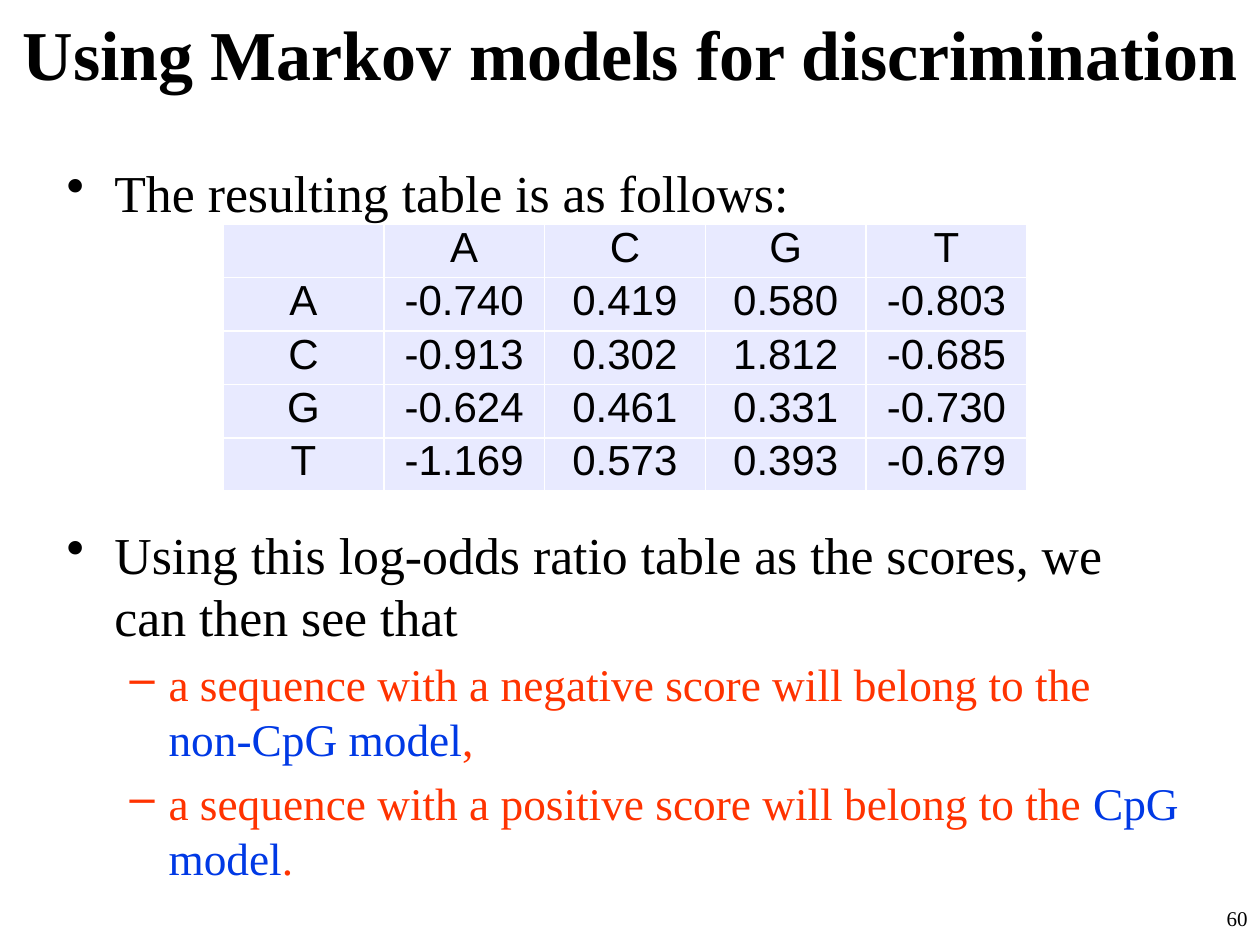
from dataclasses import dataclass

from pptx import Presentation
from pptx.dml.color import RGBColor
from pptx.enum.text import MSO_ANCHOR, PP_ALIGN
from pptx.oxml import parse_xml
from pptx.oxml.ns import nsdecls
from pptx.util import Inches, Pt


@dataclass(frozen=True)
class Theme:
    serif: str = "Times New Roman"
    sans: str = "Arial"
    black: str = "000000"
    white: str = "FFFFFF"
    red: str = "FF3300"
    blue: str = "0039E5"
    cell: str = "E8EAFF"
    title_size: float = 40
    number_size: float = 12
    table_size: float = 24
    # Per bullet level: symbol, text size, line pitch, left margin, hanging indent
    levels: tuple = (
        ("•", 29.6, 35.4, 0.38, 0.38),
        ("–", 25.9, 31.4, 0.81, 0.31),
    )


class SlideBuilder:
    def __init__(self, slide, theme):
        self.slide = slide
        self.theme = theme

    def set_font(self, font, name, size, color, bold=False):
        font.name = name
        font.size = Pt(size)
        font.bold = bold
        font.color.rgb = RGBColor.from_string(color)

    def text_frame(self, left, top, width, height, anchor=MSO_ANCHOR.TOP):
        shape = self.slide.shapes.add_textbox(
            Inches(left), Inches(top), Inches(width), Inches(height))
        frame = shape.text_frame
        frame.word_wrap = True
        frame.vertical_anchor = anchor
        return frame

    def line(self, frame, text, size, alignment, bold=False):
        paragraph = frame.paragraphs[0]
        paragraph.text = text
        paragraph.alignment = alignment
        self.set_font(paragraph.font, self.theme.serif, size, self.theme.black, bold)

    def bullet(self, paragraph, level, runs, space_before):
        symbol, size, pitch, margin, hanging = self.theme.levels[level]
        paragraph.level = level
        paragraph.line_spacing = Pt(pitch)
        paragraph.space_before = Pt(space_before)
        properties = paragraph._p.get_or_add_pPr()
        properties.set("marL", str(Inches(margin)))
        properties.set("indent", str(-Inches(hanging)))
        properties.append(parse_xml(f'<a:buChar {nsdecls("a")} char="{symbol}"/>'))
        for text, color in runs:
            run = paragraph.add_run()
            run.text = text
            self.set_font(run.font, self.theme.serif, size, color)

    def bullets(self, frame, items):
        for index, (level, runs, space_before) in enumerate(items):
            paragraph = frame.add_paragraph() if index else frame.paragraphs[0]
            self.bullet(paragraph, level, runs, space_before)

    def table(self, rows, left, top, width, height):
        shape = self.slide.shapes.add_table(
            len(rows), len(rows[0]),
            Inches(left), Inches(top), Inches(width), Inches(height))
        table = shape.table
        table.first_row = False
        table.horz_banding = False
        for row_index, values in enumerate(rows):
            for column_index, value in enumerate(values):
                self.cell(table.cell(row_index, column_index), value)

    def cell(self, cell, value):
        cell.margin_left = cell.margin_right = Inches(0.07)
        cell.margin_top = cell.margin_bottom = 0
        paragraph = cell.text_frame.paragraphs[0]
        paragraph.text = value
        paragraph.alignment = PP_ALIGN.CENTER
        self.set_font(paragraph.font, self.theme.sans, self.theme.table_size, self.theme.black)
        properties = cell._tc.get_or_add_tcPr()
        for side in ("lnL", "lnR", "lnT", "lnB"):
            properties.append(parse_xml(
                f'<a:{side} {nsdecls("a")} w="{Pt(1)}"><a:solidFill>'
                f'<a:srgbClr val="{self.theme.white}"/></a:solidFill></a:{side}>'))
        cell.fill.solid()
        cell.fill.fore_color.rgb = RGBColor.from_string(self.theme.cell)


def main():
    presentation = Presentation()
    presentation.slide_width = Inches(10)
    presentation.slide_height = Inches(7.5)
    slide = presentation.slides.add_slide(presentation.slide_layouts[6])
    theme = Theme()
    builder = SlideBuilder(slide, theme)

    title = builder.text_frame(0, 0, 10, 0.84, MSO_ANCHOR.MIDDLE)
    builder.line(title, "Using Markov models for discrimination",
                 theme.title_size, PP_ALIGN.CENTER, bold=True)

    table_gap = 171.5
    body = builder.text_frame(0.43, 1.23, 9.06, 5.83)
    builder.bullets(body, [
        (0, [("The resulting table is as follows:", theme.black)], 0),
        (0, [("Using this log-odds ratio table as the scores, we can then see that",
              theme.black)], table_gap),
        (1, [("a sequence with a negative score will belong to the ", theme.red),
             ("non-CpG model", theme.blue), (",", theme.red)], 5),
        (1, [("a sequence with a positive score will belong to the ", theme.red),
             ("CpG model", theme.blue), (".", theme.red)], 5),
    ])

    number = builder.text_frame(7.92, 7.14, 2.08, 0.36)
    builder.line(number, "60", theme.number_size, PP_ALIGN.RIGHT)

    log_odds = [
        ("", "A", "C", "G", "T"),
        ("A", "-0.740", "0.419", "0.580", "-0.803"),
        ("C", "-0.913", "0.302", "1.812", "-0.685"),
        ("G", "-0.624", "0.461", "0.331", "-0.730"),
        ("T", "-1.169", "0.573", "0.393", "-0.679"),
    ]
    builder.table(log_odds, 1.77, 1.78, 6.38, 2.12)

    presentation.save("out.pptx")


if __name__ == "__main__":
    main()
